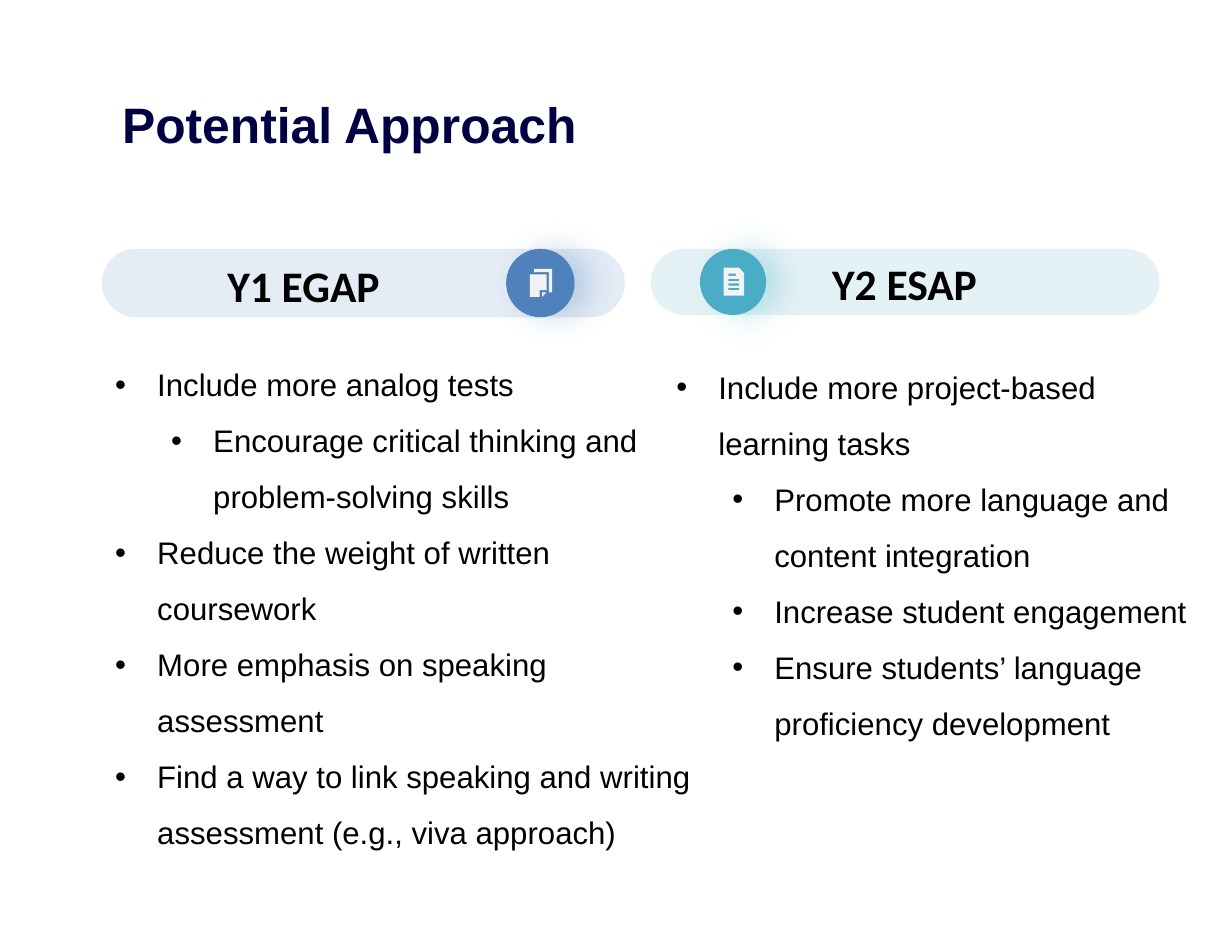
import dataclasses
import pptx
import pptx.util
import pptx.dml.color
import pptx.enum.shapes
import pptx.enum.text
import pptx.oxml
import pptx.oxml.ns

Pt = pptx.util.Pt
RGB = pptx.dml.color.RGBColor.from_string
Kind = pptx.enum.shapes.MSO_SHAPE
Fit = pptx.enum.text.MSO_AUTO_SIZE
Anchor = pptx.enum.text.MSO_ANCHOR


@dataclasses.dataclass(frozen=True)
class Theme:
    navy: str = "000043"
    black: str = "000000"
    blue: str = "4F81BD"
    teal: str = "4BACC6"
    pale: str = "F2F2F2"
    title: int = 32
    head: int = 28
    body: int = 20


theme = Theme()
deck = pptx.Presentation()
deck.slide_width, deck.slide_height = Pt(792), Pt(612)
slide = deck.slides.add_slide(deck.slide_layouts[6])
shapes = slide.shapes


def pill(left, width, height, color, alpha=None):
    shape = shapes.add_shape(Kind.ROUNDED_RECTANGLE, Pt(left), Pt(160), Pt(width), Pt(height))
    shape.adjustments[0] = 0.5
    shape.shadow.inherit = False
    shape.fill.solid()
    shape.fill.fore_color.rgb = RGB(color)
    shape.line.fill.background()
    if alpha:
        node = shape.fill._xPr.find(".//" + pptx.oxml.ns.qn("a:srgbClr"))
        node.append(pptx.oxml.parse_xml(
            f'<a:alpha {pptx.oxml.ns.nsdecls("a")} val="{alpha * 1000}"/>'))
    return shape


def style(para, size, face, color, bold=False):
    font = para.font
    font.size, font.name, font.bold = Pt(size), face, bold
    font.color.rgb = RGB(color)


title = shapes.add_textbox(Pt(78.5), Pt(60.5), Pt(636), Pt(39)).text_frame
title.margin_left = title.margin_right = title.margin_top = title.margin_bottom = 0
title.word_wrap = True
title.text = "Potential Approach"
style(title.paragraphs[0], theme.title, "Arial", theme.navy, True)

pages = [
    [(348.5, 187.9), (351.4, 187.9), (348.5, 190.8)],
    [(340.6, 176.4), (351.4, 176.4), (351.4, 186.5), (347, 186.5), (347, 190.8), (340.6, 190.8)],
    [(343.4, 172.8), (355, 172.8), (355, 187.9), (352.8, 187.9), (352.8, 175), (343.4, 175)],
]
sheet = [[(475.2, 172.1), (465.1, 172.1), (465.1, 190.1), (478.4, 190.1), (478.4, 175.7)]]
for top, right in ((175.9, 473), (179.3, 475.2), (182.2, 475.2), (185.1, 475.2)):
    sheet.append([(468.2, top), (right, top), (right, top + 1.4), (468.2, top + 1.4)])

columns = [
    dict(color=theme.blue, bar=(65.5, 336.2, 49.2), dot=325.4, icon=pages,
         head=("Y1 EGAP", 139, 162.7, 113.8), body=(67, 219.6, 398.2), items=[
             (0, "Include more analog tests"),
             (1, "Encourage critical thinking and problem-solving skills"),
             (0, "Reduce the weight of written coursework"),
             (0, "More emphasis on speaking assessment"),
             (0, "Find a way to link speaking and writing assessment (e.g., viva approach)")]),
    dict(color=theme.teal, bar=(418.5, 326.9, 42.5), dot=450, icon=sheet,
         head=("Y2 ESAP", 527.8, 161.3, 108.7), body=(427.7, 221, 359.3), items=[
             (0, "Include more project-based learning tasks"),
             (1, "Promote more language and content integration"),
             (1, "Increase student engagement"),
             (1, "Ensure students’ language proficiency development")]),
]
columns[0]["bar"] = (65.5, 336.2, 44)

for col in columns:
    left, width, high = col["bar"]
    pill(left, width, high, col["color"], 15)
    dot = pill(col["dot"], high, high, col["color"])
    glow = dot._element.spPr.find(pptx.oxml.ns.qn("a:effectLst"))
    glow.append(pptx.oxml.parse_xml(
        f'<a:outerShdw {pptx.oxml.ns.nsdecls("a")} blurRad="{Pt(20)}" dist="{Pt(10)}" dir="0">'
        f'<a:srgbClr val="{col["color"]}"><a:alpha val="30000"/></a:srgbClr></a:outerShdw>'))

    text, left, top, width = col["head"]
    head = shapes.add_textbox(Pt(left), Pt(top), Pt(width), Pt(41)).text_frame
    head.word_wrap = False
    head.auto_size = Fit.SHAPE_TO_FIT_TEXT
    head.vertical_anchor = Anchor.BOTTOM
    head.text = text
    style(head.paragraphs[0], theme.head, "Calibri", theme.black, True)

    pen = None
    for ring in col["icon"]:
        spots = [(Pt(x), Pt(y)) for x, y in ring]
        if pen is None:
            pen = shapes.build_freeform(*spots[0])
        else:
            pen.move_to(*spots[0])
        pen.add_line_segments(spots[1:], close=True)
    icon = pen.convert_to_shape()
    icon.shadow.inherit = False
    icon.fill.solid()
    icon.fill.fore_color.rgb = RGB(theme.pale)
    icon.line.fill.background()

    left, top, width = col["body"]
    body = shapes.add_textbox(Pt(left), Pt(top), Pt(width), Pt(371)).text_frame
    body.word_wrap = True
    for spot, (level, text) in enumerate(col["items"]):
        para = body.add_paragraph() if spot else body.paragraphs[0]
        para.text = text
        para.level = level
        para.line_spacing = 1.5
        style(para, theme.body, "Arial", theme.black)
        props = para._p.get_or_add_pPr()
        props.set("marL", str(Pt(27 + 36 * level)))
        props.set("indent", str(Pt(-27)))
        for tag in (f'<a:buFont {pptx.oxml.ns.nsdecls("a")} typeface="Arial"/>',
                    f'<a:buChar {pptx.oxml.ns.nsdecls("a")} char="•"/>'):
            props.insert_element_before(
                pptx.oxml.parse_xml(tag), "a:tabLst", "a:defRPr", "a:extLst")

deck.save("out.pptx")
